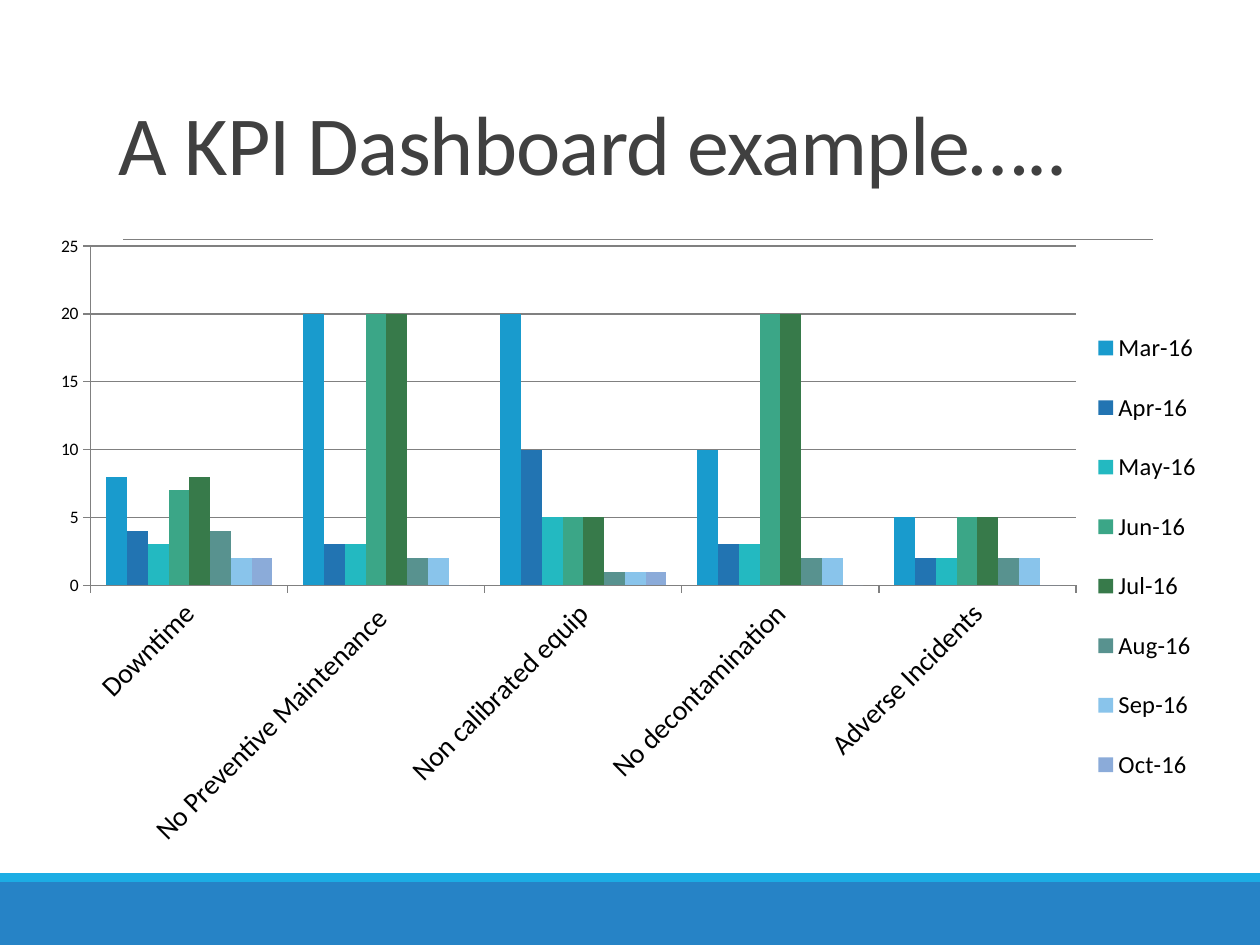
from lxml import etree
from pptx import Presentation
from pptx import util as u
from pptx.chart.data import CategoryChartData
from pptx.dml.color import RGBColor
from pptx.enum import chart as c, shapes, text
from pptx.oxml import parse_xml
from pptx.oxml.ns import nsdecls, qn

BLUE = RGBColor(0x26, 0x83, 0xC6)
CYAN = RGBColor(0x1C, 0xAD, 0xE4)
GRAY = RGBColor(0x80, 0x80, 0x80)
DARK = RGBColor(0x40, 0x40, 0x40)
BLACK = RGBColor(0, 0, 0)
FONT = "Calibri"

CATEGORIES = ["Downtime", "No Preventive Maintenance ", "Non calibrated equip",
              "No decontamination", "Adverse Incidents"]
MONTHS = [
    ("Mar-16", (8, 20, 20, 10, 5), RGBColor(0x19, 0x9B, 0xCD)),
    ("Apr-16", (4, 3, 10, 3, 2), RGBColor(0x22, 0x74, 0xB2)),
    ("May-16", (3, 3, 5, 3, 2), RGBColor(0x23, 0xB9, 0xC1)),
    ("Jun-16", (7, 20, 5, 20, 5), RGBColor(0x3B, 0xA6, 0x87)),
    ("Jul-16", (8, 20, 5, 20, 5), RGBColor(0x37, 0x7A, 0x4A)),
    ("Aug-16", (4, 2, 1, 2, 2), RGBColor(0x58, 0x92, 0x8F)),
    ("Sep-16", (2, 2, 1, 2, 2), RGBColor(0x89, 0xC4, 0xEB)),
    ("Oct-16", (2, 0, 1, 0, 0), RGBColor(0x8B, 0xAB, 0xD9)),
]


def make_layout(x, y, width, height, inner=False):
    target = '<c:layoutTarget val="inner"/>' if inner else ""
    return parse_xml(
        f'<c:layout {nsdecls("c")}><c:manualLayout>{target}'
        '<c:xMode val="edge"/><c:yMode val="edge"/>'
        f'<c:x val="{x}"/><c:y val="{y}"/><c:w val="{width}"/><c:h val="{height}"/>'
        '</c:manualLayout></c:layout>')


presentation = Presentation()
presentation.slide_width = u.Inches(10)
presentation.slide_height = u.Inches(7.5)
slide = presentation.slides.add_slide(presentation.slide_layouts[5])

for top, height, color in ((7, 0.5, BLUE), (6.93, 0.07, CYAN)):
    band = slide.shapes.add_shape(shapes.MSO_SHAPE.RECTANGLE, 0, u.Inches(top),
                                  u.Inches(10), u.Inches(height))
    band.shadow.inherit = False
    band.fill.solid()
    band.fill.fore_color.rgb = color
    band.line.fill.background()

rule = slide.shapes.add_connector(shapes.MSO_CONNECTOR.STRAIGHT, u.Inches(0.98),
                                  u.Inches(1.9), u.Inches(9.15), u.Inches(1.9))
rule.line.color.rgb = GRAY
rule.line.width = u.Pt(0.5)
etree.SubElement(rule._element.spPr, qn("a:effectLst"))

title = slide.shapes.title
title.left, title.top = u.Inches(0.84), u.Inches(0.64)
title.width, title.height = u.Inches(7.97), u.Inches(0.94)
frame = title.text_frame
frame.text = "A KPI Dashboard example….."
frame.word_wrap = True
frame.auto_size = text.MSO_AUTO_SIZE.NONE
frame.vertical_anchor = text.MSO_ANCHOR.BOTTOM
paragraph = frame.paragraphs[0]
paragraph.alignment = text.PP_ALIGN.LEFT
paragraph.line_spacing = 0.85
paragraph.font.size = u.Pt(48)
paragraph.font.name = FONT
paragraph.font.color.rgb = DARK
paragraph.runs[0].font._element.set("spc", "-50")

chart_data = CategoryChartData()
chart_data.categories = CATEGORIES
for month, values, color in MONTHS:
    chart_data.add_series(month, values)
chart = slide.shapes.add_chart(c.XL_CHART_TYPE.COLUMN_CLUSTERED, u.Inches(0.25),
                               u.Inches(1.75), u.Inches(9.42), u.Inches(5.08),
                               chart_data).chart
chart.has_title = False
chart.font.size = u.Pt(10)
chart.font.name = FONT
chart.font.color.rgb = BLACK

plot = chart.plots[0]
plot.gap_width = 150
plot.overlap = 0
plot.vary_by_categories = False
for series, (month, values, color) in zip(plot.series, MONTHS):
    series.format.fill.solid()
    series.format.fill.fore_color.rgb = color

category_axis, value_axis = chart.category_axis, chart.value_axis
for axis in (category_axis, value_axis):
    axis.major_tick_mark = c.XL_TICK_MARK.OUTSIDE
    axis.minor_tick_mark = c.XL_TICK_MARK.NONE
    axis.format.line.color.rgb = GRAY
category_axis.tick_labels.font.size = u.Pt(16)
category_axis._element.txPr.bodyPr.set("rot", "-2700000")
value_axis.minimum_scale, value_axis.maximum_scale = 0, 25
value_axis.major_unit = 5
value_axis.has_major_gridlines = True
value_axis.major_gridlines.format.line.color.rgb = GRAY

chart.has_legend = True
legend = chart.legend
legend.position = c.XL_LEGEND_POSITION.RIGHT
legend.include_in_layout = False
legend.font.size = u.Pt(14)

plot_area = chart._chartSpace.chart.plotArea
for parent, index, layout in (
        (plot_area, 0, make_layout(0.05, 0.04, 0.83, 0.53, inner=True)),
        (legend._element, 1, make_layout(0.89, 0.13, 0.1, 0.79))):
    for old_layout in parent.findall(qn("c:layout")):
        parent.remove(old_layout)
    parent.insert(index, layout)

presentation.save("out.pptx")
